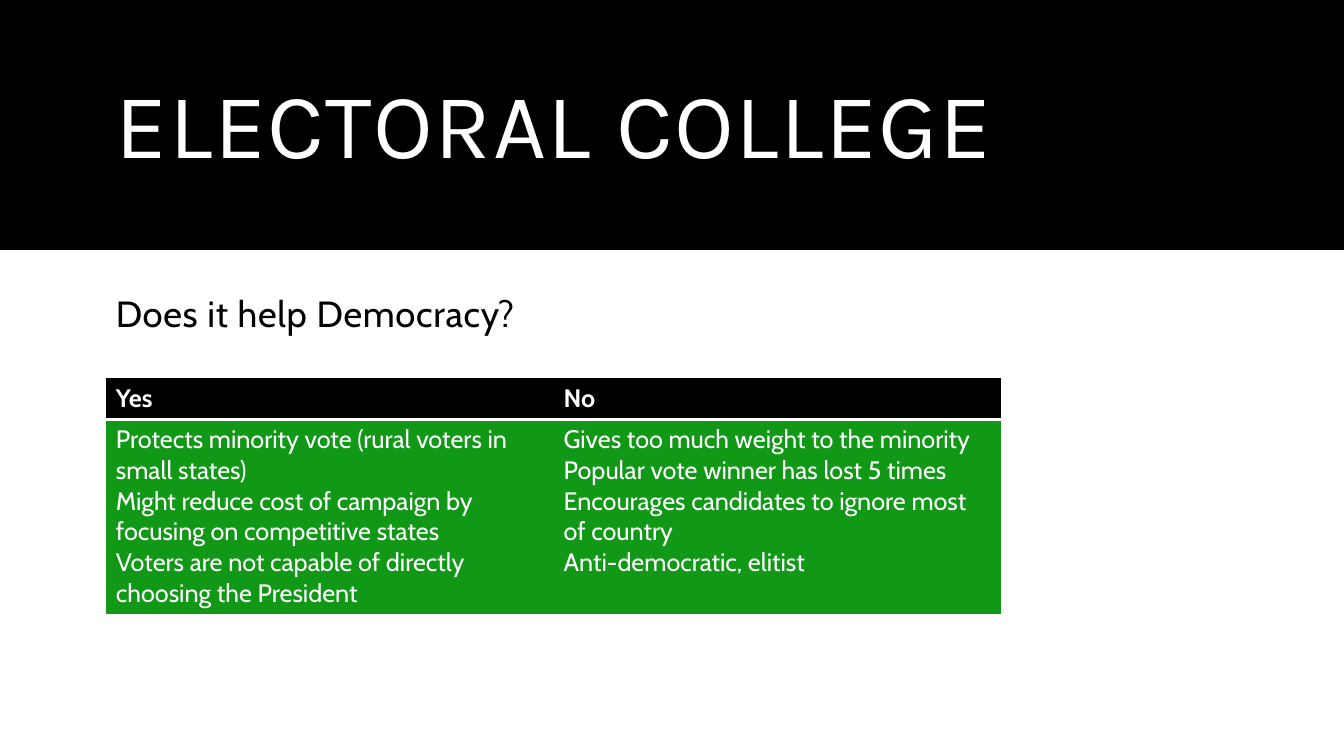
import dataclasses

import lxml.etree
import pptx
import pptx.dml.color
import pptx.enum.shapes
import pptx.enum.text
import pptx.oxml.ns
import pptx.slide
import pptx.table
import pptx.text.text
import pptx.util

Inches = pptx.util.Inches
qn = pptx.oxml.ns.qn


@dataclasses.dataclass(frozen=True)
class Theme:
    black: str = "000000"
    white: str = "FFFFFF"
    green: str = "119816"
    heading_font: str = "Karla"
    body_font: str = "Cabin"
    title_size: float = 66
    question_size: float = 26
    table_size: float = 18
    plain_table_style: str = "{2D5ABB26-0587-4C30-8999-92F81FD0307C}"


@dataclasses.dataclass(frozen=True)
class TextStyle:
    font: str
    size: float
    color: str
    bold: bool = False
    tracking: float = 0


@dataclasses.dataclass(frozen=True)
class Line:
    text: str
    top: float
    height: float
    anchor: pptx.enum.text.MSO_ANCHOR
    style: TextStyle
    line_spacing: float
    gap: float = 0


@dataclasses.dataclass(frozen=True)
class Side:
    answer: str
    reasons: tuple[str, ...]


THEME = Theme()
LEFT = 1.05
TEXT_WIDTH = 11.23
COLUMN_WIDTH = 4.44
ROW_HEIGHTS = (0.41, 1.93)

LINES = (
    Line("ELECTORAL COLLEGE", 0.35, 1.86, pptx.enum.text.MSO_ANCHOR.MIDDLE,
         TextStyle(THEME.heading_font, THEME.title_size, THEME.white, tracking=1.2), 0.9),
    Line("Does it help Democracy?", 2.83, 0.8, pptx.enum.text.MSO_ANCHOR.TOP,
         TextStyle(THEME.body_font, THEME.question_size, THEME.black, tracking=0.5), 1.01, gap=7),
)

SIDES = (
    Side("Yes", (
        "Protects minority vote (rural voters in small states)",
        "Might reduce cost of campaign by focusing on competitive states",
        "Voters are not capable of directly choosing the President",
    )),
    Side("No", (
        "Gives too much weight to the minority",
        "Popular vote winner has lost 5 times",
        "Encourages candidates to ignore most of country",
        "Anti-democratic, elitist",
    )),
)


def rgb(color: str) -> pptx.dml.color.RGBColor:
    return pptx.dml.color.RGBColor.from_string(color)


def write(frame: pptx.text.text.TextFrame, text: str, style: TextStyle) -> None:
    frame.text = text
    for paragraph in frame.paragraphs:
        for run in paragraph.runs:
            run.font.name = style.font
            run.font.size = pptx.util.Pt(style.size)
            run.font.bold = style.bold
            run.font.color.rgb = rgb(style.color)
            if style.tracking:
                run.font._element.set("spc", str(round(style.tracking * 100)))


def add_band(slide: pptx.slide.Slide, width: int) -> None:
    band = slide.shapes.add_shape(
        pptx.enum.shapes.MSO_SHAPE.RECTANGLE, 0, 0, width, Inches(2.48))
    band.shadow.inherit = False
    band.fill.solid()
    band.fill.fore_color.rgb = rgb(THEME.black)
    band.line.fill.background()


def add_line(slide: pptx.slide.Slide, line: Line) -> None:
    box = slide.shapes.add_textbox(
        Inches(LEFT), Inches(line.top), Inches(TEXT_WIDTH), Inches(line.height))
    frame = box.text_frame
    frame.word_wrap = True
    frame.vertical_anchor = line.anchor
    write(frame, line.text, line.style)
    paragraph = frame.paragraphs[0]
    paragraph.line_spacing = line.line_spacing
    paragraph.space_before = paragraph.space_after = pptx.util.Pt(line.gap)


def fill_cell(cell: pptx.table._Cell, text: str, fill: str, bold: bool) -> None:
    style = TextStyle(THEME.body_font, THEME.table_size, THEME.white, bold)
    write(cell.text_frame, text, style)
    cell.fill.solid()
    cell.fill.fore_color.rgb = rgb(fill)


def underline_cell(cell: pptx.table._Cell) -> None:
    border = lxml.etree.Element(qn("a:lnB"), w=str(pptx.util.Pt(2)))
    paint = lxml.etree.SubElement(border, qn("a:solidFill"))
    lxml.etree.SubElement(paint, qn("a:srgbClr"), val=THEME.white)
    cell._tc.get_or_add_tcPr().insert(0, border)


def add_arguments(slide: pptx.slide.Slide, sides: tuple[Side, ...]) -> None:
    frame = slide.shapes.add_table(
        len(ROW_HEIGHTS), len(sides), Inches(LEFT), Inches(3.75),
        Inches(COLUMN_WIDTH * len(sides)), Inches(sum(ROW_HEIGHTS)))
    arguments = frame.table
    arguments._tbl.tblPr.find(qn("a:tableStyleId")).text = THEME.plain_table_style
    for row, height in zip(arguments.rows, ROW_HEIGHTS):
        row.height = Inches(height)
    for column, side in enumerate(sides):
        arguments.columns[column].width = Inches(COLUMN_WIDTH)
        answer = arguments.cell(0, column)
        fill_cell(answer, side.answer, THEME.black, bold=True)
        underline_cell(answer)
        fill_cell(arguments.cell(1, column), "\n".join(side.reasons), THEME.green, bold=False)


def main() -> None:
    deck = pptx.Presentation()
    deck.slide_width, deck.slide_height = Inches(13.33), Inches(7.5)
    slide = deck.slides.add_slide(deck.slide_layouts[6])

    # Title band, title and question
    add_band(slide, deck.slide_width)
    for line in LINES:
        add_line(slide, line)

    # Arguments on both sides
    add_arguments(slide, SIDES)

    deck.save("out.pptx")


if __name__ == "__main__":
    main()
